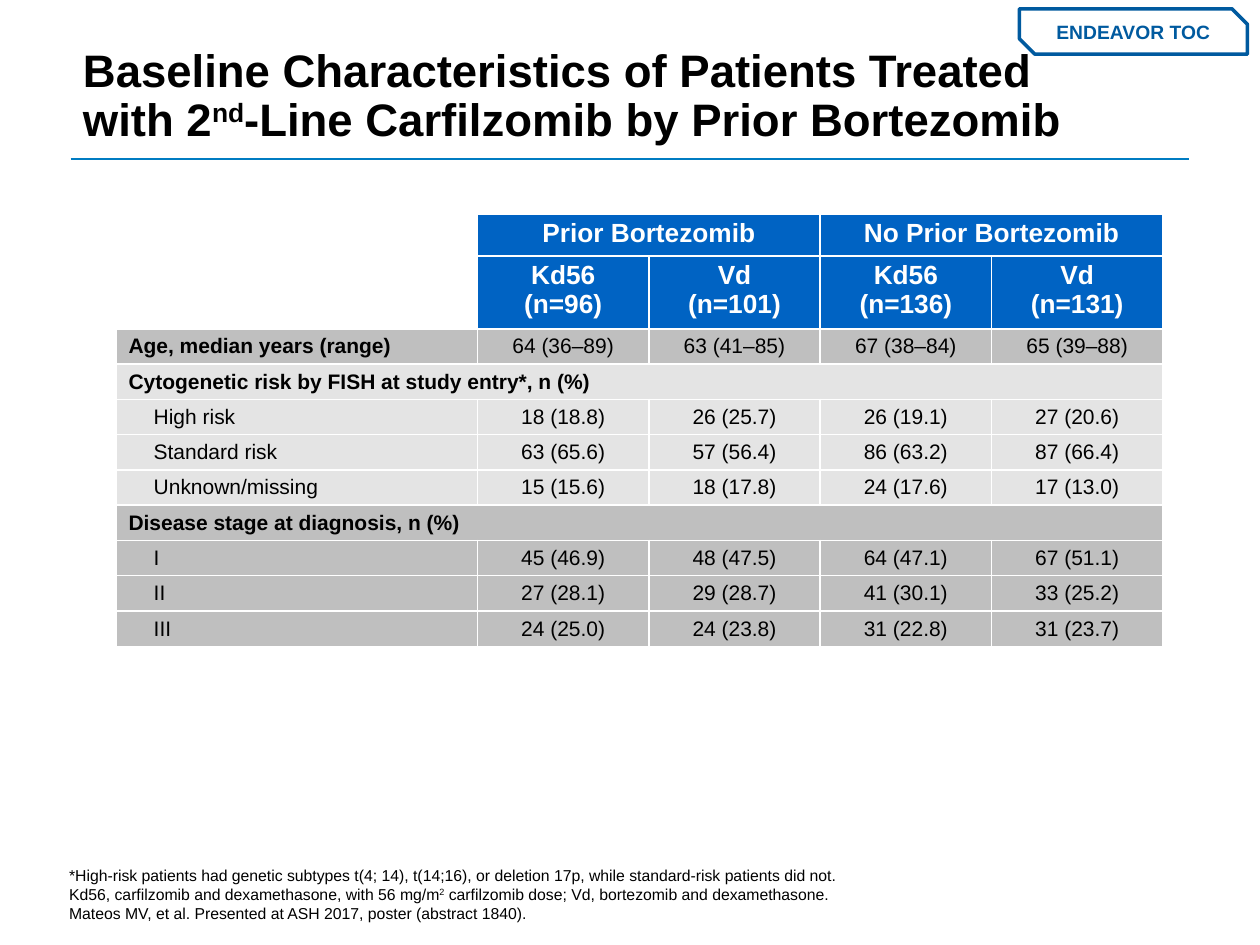
from lxml import etree
from pptx import Presentation
from pptx.dml.color import RGBColor
from pptx.enum.shapes import MSO_CONNECTOR as Connector, MSO_SHAPE as Shape
from pptx.enum.text import MSO_ANCHOR as Anchor, PP_ALIGN as Align
from pptx.oxml import parse_xml
from pptx.oxml.ns import nsdecls, qn
from pptx.util import Inches, Pt

BLUE, DARK, LIGHT = "0063C3", "BFBFBF", "E4E4E4"
BLACK, WHITE, BADGE = "000000", "FFFFFF", "005A9F"


def rgb(value):
    return RGBColor.from_string(value)


def add_rich_text(para, text, size, bold=False):
    """Add black Arial text; '^' toggles superscript and a newline breaks the line."""
    for number, line in enumerate(text.split("\n")):
        if number:
            para.add_line_break()
        for index, piece in enumerate(line.split("^")):
            span = para.add_run()
            span.text = piece
            span.font.name, span.font.size, span.font.bold = "Arial", Pt(size), bold
            span.font.color.rgb = rgb(BLACK)
            if index % 2:
                span.font._element.set("baseline", "30000")


deck = Presentation()
deck.slide_width, deck.slide_height = Inches(10), Inches(7.5)
page = deck.slides.add_slide(deck.slide_layouts[6])

# Title and rule
rule = page.shapes.add_connector(
    Connector.STRAIGHT, Inches(0.56), Inches(1.26), Inches(9.44), Inches(1.26))
rule.line.color.rgb, rule.line.width = rgb("007CC2"), Pt(1)
etree.SubElement(rule._element.spPr, qn("a:effectLst"))

title = page.shapes.add_textbox(Inches(0.56), Inches(0), Inches(8.88), Inches(1.21)).text_frame
title.word_wrap, title.vertical_anchor = True, Anchor.BOTTOM
title.paragraphs[0].line_spacing = 0.9
add_rich_text(title.paragraphs[0],
              "Baseline Characteristics of Patients Treated \n"
              "with 2^nd^-Line Carfilzomib by Prior Bortezomib", 26, bold=True)

# Footnotes
notes = page.shapes.add_textbox(Inches(0.45), Inches(6.82), Inches(7.22), Inches(0.5)).text_frame
notes.word_wrap, notes.vertical_anchor, notes.margin_bottom = True, Anchor.BOTTOM, 0
add_rich_text(notes.paragraphs[0],
              "*High-risk patients had genetic subtypes t(4; 14), t(14;16), or deletion 17p, "
              "while standard-risk patients did not.\n"
              "Kd56, carfilzomib and dexamethasone, with 56 mg/m^2^ carfilzomib dose; "
              "Vd, bortezomib and dexamethasone.", 9)
add_rich_text(notes.add_paragraph(),
              "Mateos MV, et al. Presented at ASH 2017, poster (abstract 1840).", 9)

# Baseline table: row fill, then cell texts
rows = [
    (BLUE, "", "Prior Bortezomib", "", "No Prior Bortezomib", ""),
    (BLUE, "", "Kd56\n(n=96)", "Vd\n(n=101)", "Kd56\n(n=136)", "Vd\n(n=131)"),
    (DARK, "Age, median years (range)", "64 (36–89)", "63 (41–85)", "67 (38–84)", "65 (39–88)"),
    (LIGHT, "Cytogenetic risk by FISH at study entry*, n (%)", "", "", "", ""),
    (LIGHT, "High risk", "18 (18.8)", "26 (25.7)", "26 (19.1)", "27 (20.6)"),
    (LIGHT, "Standard risk", "63 (65.6)", "57 (56.4)", "86 (63.2)", "87 (66.4)"),
    (LIGHT, "Unknown/missing", "15 (15.6)", "18 (17.8)", "24 (17.6)", "17 (13.0)"),
    (DARK, "Disease stage at diagnosis, n (%)", "", "", "", ""),
    (DARK, "I", "45 (46.9)", "48 (47.5)", "64 (47.1)", "67 (51.1)"),
    (DARK, "II", "27 (28.1)", "29 (28.7)", "41 (30.1)", "33 (25.2)"),
    (DARK, "III", "24 (25.0)", "24 (23.8)", "31 (22.8)", "31 (23.7)"),
]
HEADER_ROWS, BOLD_LABEL_ROWS, SECTION_ROWS = 2, (2, 3, 7), (3, 7)
table = page.shapes.add_table(
    len(rows), 5, Inches(0.92), Inches(1.7), Inches(8.3), Inches(3.37)).table
for index, column in enumerate(table.columns):
    column.width = Inches(1.36 if index else 2.87)
for index, row in enumerate(table.rows):
    row.height = Inches((0.32, 0.58)[index] if index < HEADER_ROWS else 0.275)

for r, (fill, *texts) in enumerate(rows):
    header = r < HEADER_ROWS
    for c, text in enumerate(texts):
        cell = table.cell(r, c)
        for side in ("lnL", "lnR", "lnT", "lnB"):
            cell._tc.get_or_add_tcPr().append(parse_xml(
                f'<a:{side} {nsdecls("a")} w="12700"><a:solidFill>'
                f'<a:srgbClr val="{WHITE}"/></a:solidFill></a:{side}>'))
        cell.fill.solid()
        cell.fill.fore_color.rgb = rgb(WHITE if header and c == 0 else fill)
        cell.margin_top = cell.margin_bottom = Inches(0.04)
        cell.vertical_anchor = Anchor.TOP if header else Anchor.MIDDLE
        cell.text_frame.text = text
        for para in cell.text_frame.paragraphs:
            para.alignment = Align.CENTER if c else Align.LEFT
            if c == 0 and not header and r not in BOLD_LABEL_ROWS:
                para._p.get_or_add_pPr().set("marL", str(Inches(0.2)))
            para.font.size = Pt(15 if header else 12)
            for span in para.runs:
                span.font.name, span.font.size = "Arial", Pt(15 if header else 12)
                span.font.bold = header or (c == 0 and r in BOLD_LABEL_ROWS)
                span.font.color.rgb = rgb(WHITE if header else BLACK)

table.cell(0, 0).merge(table.cell(1, 0))
for c in (1, 3):
    table.cell(0, c).merge(table.cell(0, c + 1))
for r in SECTION_ROWS:
    table.cell(r, 0).merge(table.cell(r, 4))

# Contents badge
badge = page.shapes.add_shape(
    Shape.SNIP_2_DIAG_RECTANGLE, Inches(8.09), Inches(0.07), Inches(1.81), Inches(0.36))
badge.adjustments[0], badge.adjustments[1] = 0, 0.34
badge.shadow.inherit = False
badge.fill.background()
badge.line.color.rgb, badge.line.width = rgb(BADGE), Pt(2)
badge.text_frame.text = "ENDEAVOR TOC"
badge.text_frame.word_wrap, badge.text_frame.vertical_anchor = False, Anchor.MIDDLE
label = badge.text_frame.paragraphs[0]
label.alignment = Align.CENTER
font = label.runs[0].font
font.name, font.size, font.bold = "Arial", Pt(11), True
font.color.rgb = rgb(BADGE)

deck.save("out.pptx")
